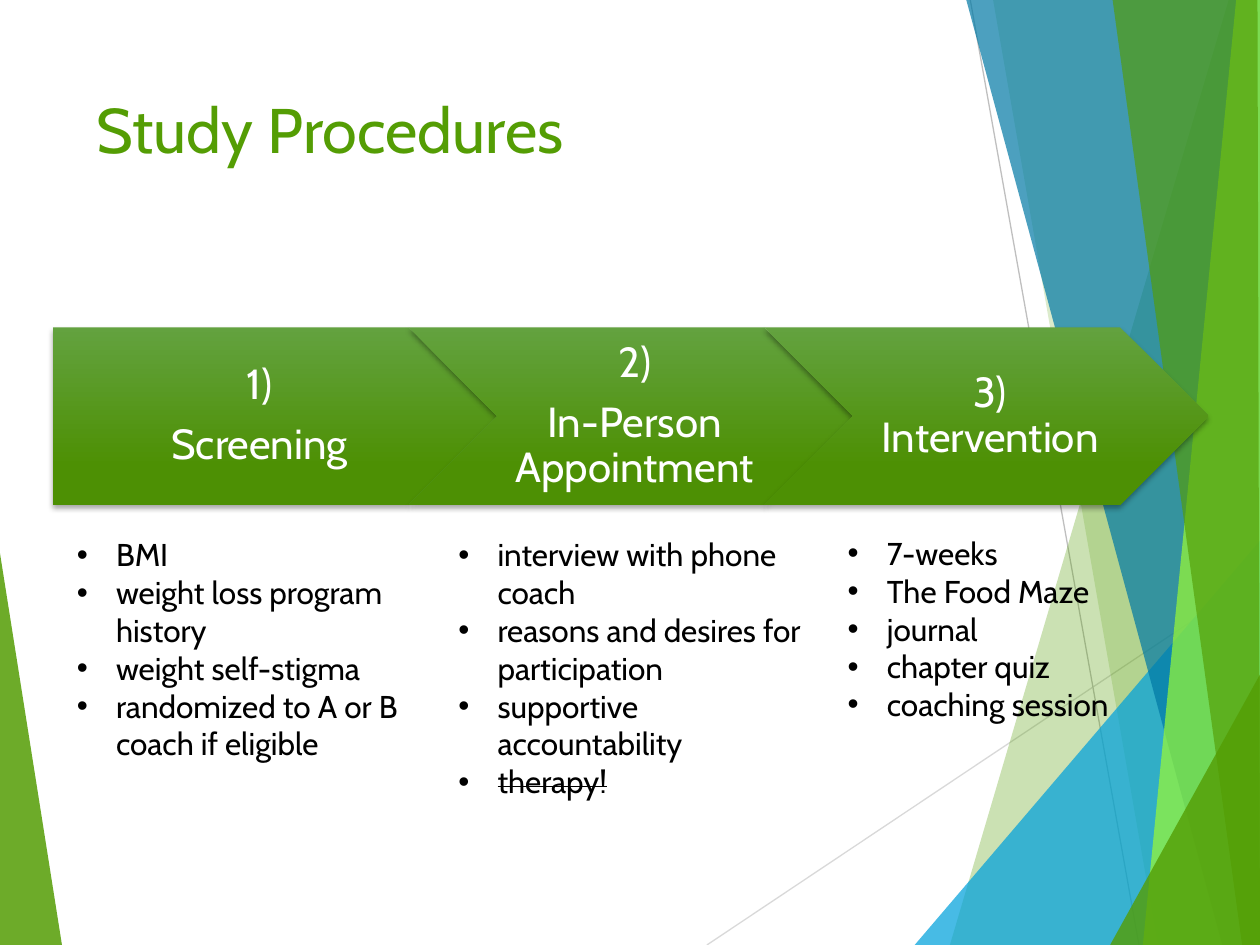
from lxml import etree
from pptx import Presentation
from pptx.dml.color import RGBColor
from pptx.enum.shapes import MSO_CONNECTOR, MSO_SHAPE
from pptx.enum.text import MSO_ANCHOR, PP_ALIGN
from pptx.oxml.ns import qn
from pptx.util import Cm, Pt

PLATE, CHEVRON = MSO_SHAPE.PENTAGON, MSO_SHAPE.CHEVRON
STRAIGHT = MSO_CONNECTOR.STRAIGHT
TOP, MIDDLE = MSO_ANCHOR.TOP, MSO_ANCHOR.MIDDLE
LEFT, CENTER = PP_ALIGN.LEFT, PP_ALIGN.CENTER
FONT, GREEN = "Cabin", "549D04"
W, H = 25.4, 19.05

# Content: step heading lines, list box (left, top, width, height), bullets
TITLE = "Study Procedures"
STEPS = [
    (["1)", "Screening"], (0.03, 10.67, 8.59, 4.88),
     ["BMI", "weight loss program history", "weight self-stigma",
      "randomized to A or B coach if eligible"]),
    (["2)", "In-Person Appointment"], (7.72, 10.67, 8.89, 5.64),
     ["interview with phone coach", "reasons and desires for participation",
      "supportive accountability", "therapy!"]),
    (["3) Intervention"], (15.57, 10.64, 8.41, 4.11),
     ["7-weeks", "The Food Maze", "journal", "chapter quiz", "coaching session"]),
]
STRUCK = {"therapy!"}

# Background: lines, then facets as (points, colour, opacity %)
LINES = [((14.25, H), (W, 11.6), "D9D9D9"), ((19.56, 0), (22.96, H), "BFBFBF")]


def band(top_x, bottom_x):
    """Facet from a slanted left edge to the right side of the slide."""
    return [(top_x, 0), (bottom_x, H), (W, H), (W, 0)]


def corner(x, y):
    """Triangle in the bottom right corner."""
    return [(x, H), (W, y), (W, H)]


LEFT_FACET = ([(0, 11.15), (1.25, H), (0, H)], GREEN, 85)
RIGHT_FACETS = [
    (band(24.77, 19.15), GREEN, 30),
    (band(20.02, 23.34), GREEN, 20),
    (corner(18.44, 10.9), "00A1DC", 72),
    (band(19.48, 24.64), "0079A5", 70),
    (band(24.92, 23.04), "9BFA33", 70),
    ([(22.43, 0), (25.04, H), (W, H), (25.35, 0)], GREEN, 65),
    (corner(22.38, 13.6), GREEN, 80),
]

# Arrow row
ROW_X, ROW_Y, STEP_W, STEP_H = 1.07, 6.6, 8.96, 3.58
STEP_DX = STEP_W * 0.8


def rgb(color):
    return RGBColor.from_string(color)


def add_facet(s, points, color, opacity):
    pts = [(Cm(x), Cm(y)) for x, y in points]
    fb = s.shapes.build_freeform(*pts[0])
    fb.add_line_segments(pts[1:], close=True)
    sp = fb.convert_to_shape()
    sp.shadow.inherit = False
    sp.fill.solid()
    sp.fill.fore_color.rgb = rgb(color)
    sp.line.fill.background()
    clr = sp._element.spPr.find(".//" + qn("a:srgbClr"))
    etree.SubElement(clr, qn("a:alpha"), val=str(opacity * 1000))


def add_line(s, start, end, color):
    cn = s.shapes.add_connector(STRAIGHT, *(Cm(v) for v in start + end))
    cn.line.color.rgb = rgb(color)
    cn.line.width = Pt(0.75)
    etree.SubElement(cn._element.spPr, qn("a:effectLst"))


def add_arrow(s, kind, x):
    sp = s.shapes.add_shape(kind, Cm(x), Cm(ROW_Y), Cm(STEP_W), Cm(STEP_H))
    sp.fill.gradient()
    sp.fill.gradient_angle = 270
    stops = [(0, "63A23F"), (0.78, "4D9004")]
    for stop, (position, color) in zip(sp.fill.gradient_stops, stops):
        stop.position = position
        stop.color.rgb = rgb(color)
    sp.line.fill.background()
    sp.shadow.inherit = False
    effects = sp._element.spPr.find(qn("a:effectLst"))
    shadow = etree.SubElement(effects, qn("a:outerShdw"), blurRad=str(Pt(3)),
                              dist=str(Pt(2)), dir="5400000", rotWithShape="0")
    clr = etree.SubElement(shadow, qn("a:srgbClr"), val="000000")
    etree.SubElement(clr, qn("a:alpha"), val="35000")


def add_text(s, box, lines, size, color, align=LEFT, anchor=TOP):
    tf = s.shapes.add_textbox(*(Cm(v) for v in box)).text_frame
    tf.word_wrap = True
    tf.vertical_anchor = anchor
    tf.text = "\n".join(lines)
    for p in tf.paragraphs:
        p.alignment = align
        for r in p.runs:
            r.font.name, r.font.size = FONT, Pt(size)
            r.font.color.rgb = rgb(color)
    return tf


def add_heading(s, box, lines, left_inset):
    tf = add_text(s, box, lines, 24, "FFFFFF", CENTER, MIDDLE)
    tf.margin_left, tf.margin_right = Cm(left_inset), Cm(0.1)
    tf.margin_top = tf.margin_bottom = Cm(0.18)
    for p in tf.paragraphs:
        p.line_spacing = 0.9
        p.space_after = Pt(8.4)


def add_bullets(s, box, items):
    tf = add_text(s, box, items, 18, "000000")
    for p in tf.paragraphs:
        p.level = 1
        pPr = p._p.get_or_add_pPr()
        pPr.set("marL", str(Cm(2.06)))
        pPr.set("indent", str(Cm(-0.79)))
        etree.SubElement(pPr, qn("a:buFont"), typeface="Arial")
        etree.SubElement(pPr, qn("a:buChar"), char="•")
        if p.text in STRUCK:
            p.runs[0]._r.get_or_add_rPr().set("strike", "sngStrike")


def main():
    prs = Presentation()
    prs.slide_width, prs.slide_height = Cm(W), Cm(H)
    s = prs.slides.add_slide(prs.slide_layouts[6])

    # Background
    add_facet(s, *LEFT_FACET)
    for line in LINES:
        add_line(s, *line)
    for facet in RIGHT_FACETS:
        add_facet(s, *facet)

    # Arrow row: each chevron overlaps the tip of the step before it
    tip = STEP_H / 2
    for i, (heading, _, _) in enumerate(STEPS):
        x = ROW_X + i * STEP_DX
        add_arrow(s, CHEVRON if i else PLATE, x)
        if i:
            box, inset = (x + tip, ROW_Y, STEP_W - 2 * tip, STEP_H), 0.25
        else:
            box, inset = (x, ROW_Y, STEP_W - tip / 2, STEP_H), 0.36
        add_heading(s, box, heading, inset)

    # Title and lists
    add_text(s, (1.7, 1.7, 17.63, 3.66), [TITLE], 36, GREEN)
    for _, box, items in STEPS:
        add_bullets(s, box, items)

    prs.save("out.pptx")


if __name__ == "__main__":
    main()
